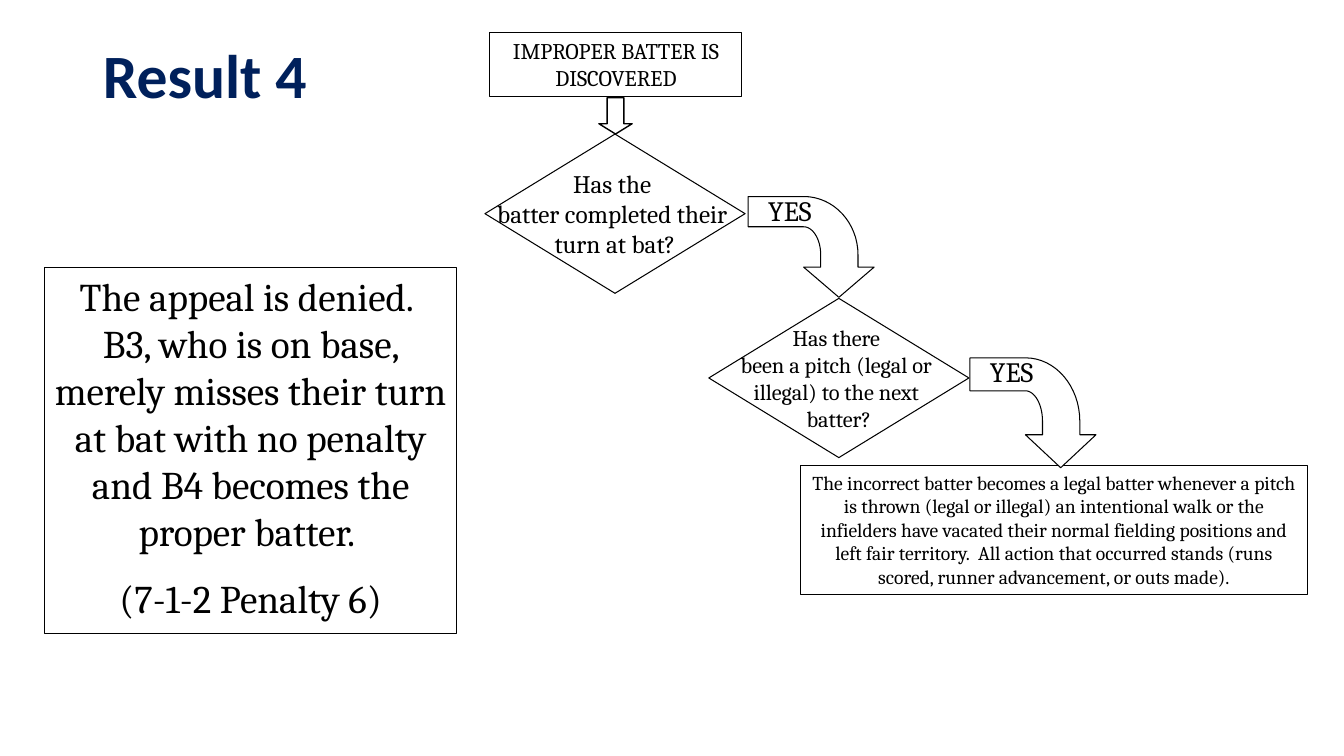
import pptx
import pptx.util
import pptx.dml.color
import pptx.enum.shapes
import pptx.enum.text

Inches = pptx.util.Inches
Pt = pptx.util.Pt
Kind = pptx.enum.shapes.MSO_SHAPE
Anchor = pptx.enum.text.MSO_ANCHOR
Align = pptx.enum.text.PP_ALIGN
AutoSize = pptx.enum.text.MSO_AUTO_SIZE

TITLE = "Result 4"
BOXES = [
    ((4.86, 0.32, 2.5, 0.64), 16, ["IMPROPER BATTER IS DISCOVERED"]),
    ((7.94, 4.62, 5.03, 1.28), 14, [
        "The incorrect batter becomes a legal batter whenever a pitch is thrown "
        "(legal or illegal) an intentional walk or the infielders have vacated their "
        "normal fielding positions and left fair territory.  All action that occurred "
        "stands (runs scored, runner advancement, or outs made)."]),
    ((0.44, 2.65, 4.09, 3.64), 28, [
        "The appeal is denied.  B3, who is on base, merely misses their turn at bat "
        "with no penalty and B4 becomes the proper batter. ",
        "(7-1-2 Penalty 6)"]),
]
DECISIONS = [
    ((4.81, 1.33, 2.58, 1.58), 18,
     ["Has the ", "batter completed their ", "turn at bat?"]),
    ((7.03, 2.96, 2.58, 1.58), 16,
     ["Has there ", "been a pitch (legal or ", "illegal) to the next ", "batter?"]),
]
DOWN_ARROW = (5.94, 0.97, 0.33, 0.36)
YES_ARROWS = [(7.42, 1.95, 1.0), (9.62, 3.55, 1.09)]
YES_LABEL = "YES"
OUTER_BEND = [(1.09, 0.58), (1.09, 0.26), (0.85, 0), (0.55, 0)]
INNER_BEND = [(0.55, 0.3), (0.64, 0.3), (0.72, 0.42), (0.72, 0.58)]
BEND_STEPS = 16


def color(value):
    return pptx.dml.color.RGBColor.from_string(value)


def place(frame):
    return [Inches(value) for value in frame]


def outline(shape, width=0.75):
    shape.shadow.inherit = False
    shape.fill.solid()
    shape.fill.fore_color.rgb = color("FFFFFF")
    shape.line.color.rgb = color("000000")
    shape.line.width = Pt(width)


def write(shape, lines, size, wrap=True, gap=0):
    text_frame = shape.text_frame
    text_frame.word_wrap = wrap
    text_frame.text = "\n".join(lines)
    for index, paragraph in enumerate(text_frame.paragraphs):
        paragraph.alignment = Align.CENTER
        paragraph.space_before = Pt(gap if index else 0)
        paragraph.font.name = "Cambria"
        paragraph.font.size = Pt(size)
        paragraph.font.color.rgb = color("000000")


def bend(points):
    for step in range(BEND_STEPS + 1):
        t = step / BEND_STEPS
        weights = ((1 - t) ** 3, 3 * t * (1 - t) ** 2, 3 * t * t * (1 - t), t ** 3)
        yield tuple(sum(w * point[axis] for w, point in zip(weights, points))
                    for axis in (0, 1))


def add_yes_arrow(slide, left, top, stretch):
    corners = [(0.9, 1), (1.25, 0.7), (1.09, 0.7), *bend(OUTER_BEND), (0, 0),
               (0, 0.3), *bend(INNER_BEND), (0.72, 0.7), (0.55, 0.7)]
    points = [(Inches(left + x), Inches(top + y * stretch)) for x, y in corners]
    group = slide.shapes.add_group_shape()
    builder = group.shapes.build_freeform(*points[0])
    builder.add_line_segments(points[1:], close=True)
    outline(builder.convert_to_shape())
    label = group.shapes.add_textbox(*place((left + 0.05, top - 0.08, 0.73, 0.44)))
    write(label, [YES_LABEL], 20, wrap=False)
    label.text_frame.auto_size = AutoSize.SHAPE_TO_FIT_TEXT


def add_title(slide):
    title = slide.shapes.title
    title.left, title.top, title.width, title.height = place((0.92, 0.4, 11.5, 1.45))
    title.text_frame.text = TITLE
    title.text_frame.vertical_anchor = Anchor.TOP
    title.text_frame.auto_size = AutoSize.NONE
    paragraph = title.text_frame.paragraphs[0]
    paragraph.alignment = Align.LEFT
    paragraph.line_spacing = 0.9
    paragraph.font.name = "Calibri"
    paragraph.font.size = Pt(44)
    paragraph.font.bold = True
    paragraph.font.color.rgb = color("00205B")


def main():
    presentation = pptx.Presentation()
    presentation.slide_width = Inches(13.33)
    presentation.slide_height = Inches(7.5)
    slide = presentation.slides.add_slide(presentation.slide_layouts[5])
    add_title(slide)
    for frame, size, lines in BOXES:
        box = slide.shapes.add_shape(Kind.RECTANGLE, *place(frame))
        outline(box)
        write(box, lines, size, gap=size / 2)
        box.text_frame.vertical_anchor = Anchor.TOP
        box.text_frame.auto_size = AutoSize.SHAPE_TO_FIT_TEXT
    for frame, size, lines in DECISIONS:
        decision = slide.shapes.add_shape(Kind.FLOWCHART_DECISION, *place(frame))
        outline(decision)
        write(decision, lines, size, wrap=False)
        decision.text_frame.vertical_anchor = Anchor.MIDDLE
    arrow = slide.shapes.add_shape(Kind.DOWN_ARROW, *place(DOWN_ARROW))
    arrow.adjustments[1] = 0.31
    outline(arrow, 1)
    for left, top, stretch in YES_ARROWS:
        add_yes_arrow(slide, left, top, stretch)
    presentation.save("out.pptx")


if __name__ == "__main__":
    main()
